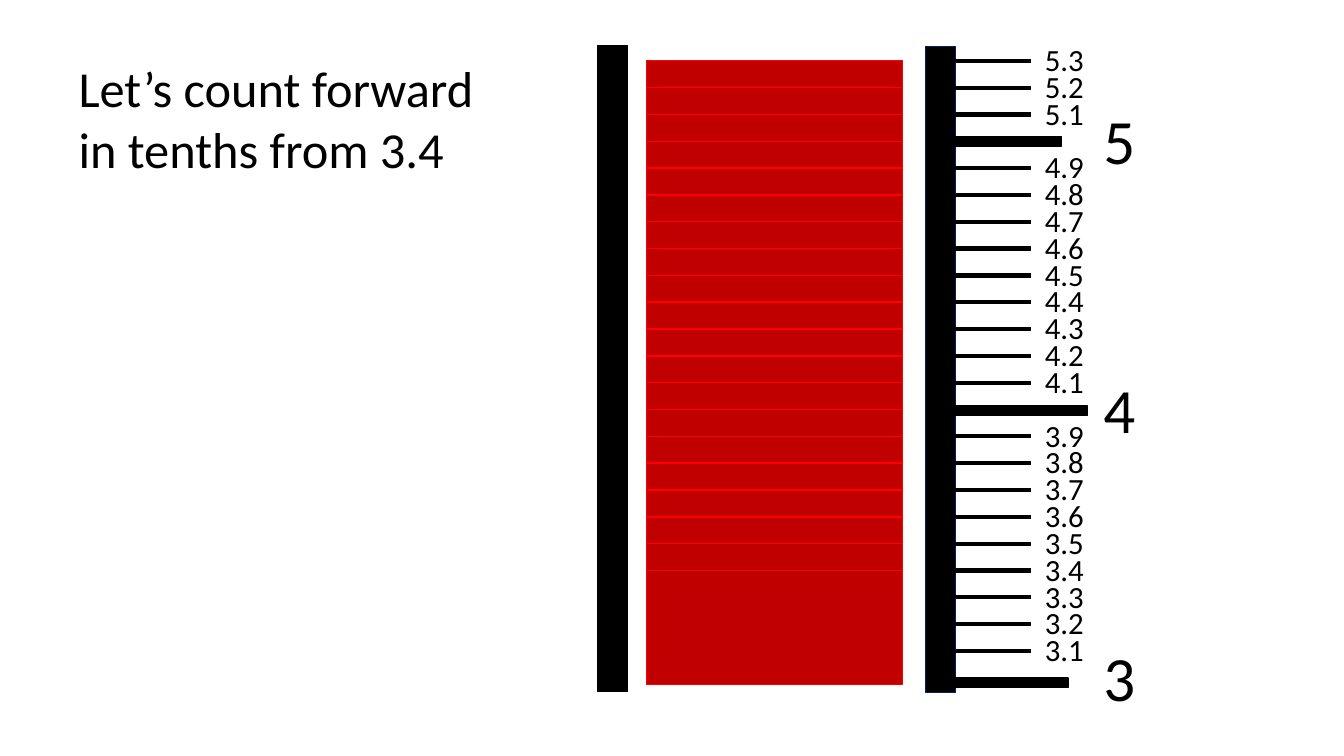
from lxml import etree
from pptx import Presentation
from pptx.dml.color import RGBColor
from pptx.enum.shapes import MSO_CONNECTOR, MSO_SHAPE
from pptx.enum.text import MSO_AUTO_SIZE
from pptx.oxml.ns import qn
from pptx.util import Cm, Pt

RECT = MSO_SHAPE.RECTANGLE
LINE = MSO_CONNECTOR.STRAIGHT
GROW = MSO_AUTO_SIZE.SHAPE_TO_FIT_TEXT

BLACK, NAVY, DARK, RED = "000000", "002060", "C00000", "FF0000"
FONT = "Calibri"

ZERO = 15.94         # depth of 3.0 below the top of the gauge
STEP = 13.52 / 20    # one tenth
START, END = 34, 53  # first and last counted tenths
# whole number: left, width and drop of its bar
WHOLES = {3: (8.81, 3.05, 0.13), 4: (8.84, 3.51, 0.03), 5: (9.02, 2.67, 0)}


def color(code):
    return RGBColor.from_string(code)


def add_rect(slide, left, top, width, height, fill, edge):
    shape = slide.shapes.add_shape(RECT, Cm(left), Cm(top), Cm(width), Cm(height))
    shape.shadow.inherit = False
    shape.fill.solid()
    shape.fill.fore_color.rgb = color(fill)
    shape.line.color.rgb = color(edge)
    shape.line.width = Pt(1)


def add_text(slide, left, top, width, height, text, size):
    frame = slide.shapes.add_textbox(
        Cm(left), Cm(top), Cm(width), Cm(height)).text_frame
    for name, value in {"word_wrap": True, "auto_size": GROW}.items():
        setattr(frame, name, value)
    run = frame.paragraphs[0].add_run()
    run.text = text
    for name, value in {"name": FONT, "size": Pt(size)}.items():
        setattr(run.font, name, value)
    run.font.color.rgb = color(BLACK)


def add_tick(slide, left, right, level):
    tick = slide.shapes.add_connector(
        LINE, Cm(left), Cm(level), Cm(right), Cm(level))
    tick.line.color.rgb = color(BLACK)
    tick.line.width = Pt(3)
    etree.SubElement(tick._element.spPr, qn("a:effectLst"))


def depth(tenths):
    """Distance of a value from the top of the gauge."""
    return ZERO - (tenths - 30) * STEP


def add_rails(slide, left, top, height):
    add_rect(slide, left, top, 0.76, height, BLACK, BLACK)
    add_rect(slide, left + 8.26, top + 0.03, 0.76, height, BLACK, NAVY)


def add_stack(slide, left, top, width):
    """Red column: a tall base up to the start, then one block a tenth."""
    for tenths in range(START, END + 1):
        height = 2.87 if tenths == START else STEP
        add_rect(slide, left, top + depth(tenths), width, height, DARK, RED)


def add_scale(slide, left, top):
    for tenths in range(30, END + 1):
        whole, part = divmod(tenths, 10)
        level = top + depth(tenths)
        if part:
            add_tick(slide, left + 8.31, left + 10.92, level)
            add_text(slide, left + 11.02, level - 0.63, 1.88, 1.19,
                     f"{whole}.{part}", 22)
        else:
            start, width, drop = WHOLES[whole]
            add_rect(slide, left + start, level + drop - 0.12, width, 0.24,
                     BLACK, BLACK)
            add_text(slide, left + 12.5, level - 1.12, 1.73, 2.18,
                     str(whole), 45)


def add_gauge(slide, left, top, height):
    add_rails(slide, left, top, height)
    add_stack(slide, left + 1.24, top, 6.45)
    add_scale(slide, left, top)


def main():
    deck = Presentation()
    deck.slide_width, deck.slide_height = Cm(33.87), Cm(19.05)
    slide = deck.slides.add_slide(deck.slide_layouts[6])
    add_text(slide, 1.73, 1.32, 11.28, 3.33,
             "Let’s count forward in tenths from 3.4", 36)
    add_gauge(slide, 15.06, 1.14, 16.28)
    deck.save("out.pptx")


if __name__ == "__main__":
    main()
